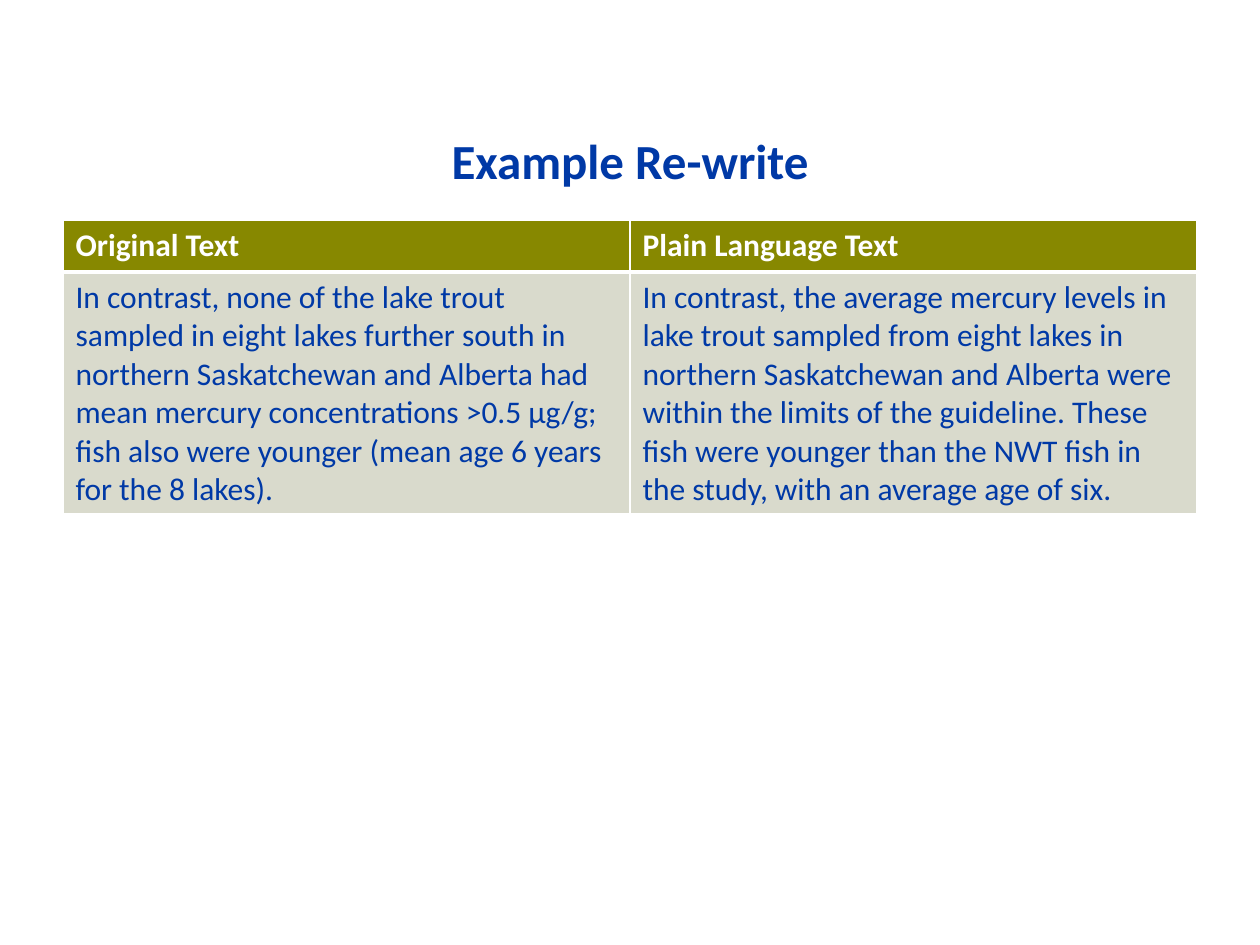
from lxml.etree import SubElement
from pptx import Presentation
from pptx.dml.color import RGBColor
from pptx.enum.text import MSO_ANCHOR as Anchor, PP_ALIGN as Align
from pptx.oxml.ns import qn
from pptx.util import Inches, Pt

COLORS = {"blue": "0039A6", "olive": "878800", "stone": "D9DACC", "white": "FFFFFF"}
FONT = "Calibri"

ROWS = [
    ("Original Text", "Plain Language Text"),
    (
        "In contrast, none of the lake trout sampled in eight lakes further south in "
        "northern Saskatchewan and Alberta had mean mercury concentrations >0.5 μg/g; "
        "fish also were younger (mean age 6 years for the 8 lakes).",
        "In contrast, the average mercury levels in lake trout sampled from eight lakes in "
        "northern Saskatchewan and Alberta were within the limits of the guideline. These "
        "fish were younger than the NWT fish in the study, with an average age of six.",
    ),
]
ROW_HEIGHTS = [0.41, 1.92]
# fill, text colour, bold, top and bottom border widths in points
ROW_STYLES = [("olive", "white", True, 1, 3), ("stone", "blue", False, 3, 1)]


def add_span(para, text, size, color, bold):
    span = para.add_run()
    span.text = text
    span.font.name = FONT
    span.font.size = Pt(size)
    span.font.bold = bold
    span.font.color.rgb = RGBColor.from_string(COLORS[color])


def add_border(cell, side, width):
    """Draw a white border on one side (L, R, T or B); call before filling the cell."""
    line = SubElement(cell._tc.get_or_add_tcPr(), qn(f"a:ln{side}"), w=str(Pt(width)))
    fill = SubElement(line, qn("a:solidFill"))
    SubElement(fill, qn("a:srgbClr"), val=COLORS["white"])


deck = Presentation()
deck.slide_width, deck.slide_height = Inches(10), Inches(7.5)
page = deck.slides.add_slide(deck.slide_layouts[6])

title = page.shapes.add_textbox(Inches(0.5), Inches(0.3), Inches(9), Inches(1.25))
title.text_frame.word_wrap = True
title.text_frame.vertical_anchor = Anchor.BOTTOM
heading = title.text_frame.paragraphs[0]
heading.alignment = Align.CENTER
heading.line_spacing = Pt(30)
add_span(heading, "Example Re-write", 28, "blue", True)

table = page.shapes.add_table(
    len(ROWS), 2, Inches(0.5), Inches(1.75), Inches(9), Inches(sum(ROW_HEIGHTS))
).table
for row, height, texts, style in zip(table.rows, ROW_HEIGHTS, ROWS, ROW_STYLES):
    row.height = Inches(height)
    fill, color, bold, top, bottom = style
    for cell, text in zip(row.cells, texts):
        for side, width in (("L", 1), ("R", 1), ("T", top), ("B", bottom)):
            add_border(cell, side, width)
        cell.fill.solid()
        cell.fill.fore_color.rgb = RGBColor.from_string(COLORS[fill])
        add_span(cell.text_frame.paragraphs[0], text, 18, color, bold)

deck.save("out.pptx")
